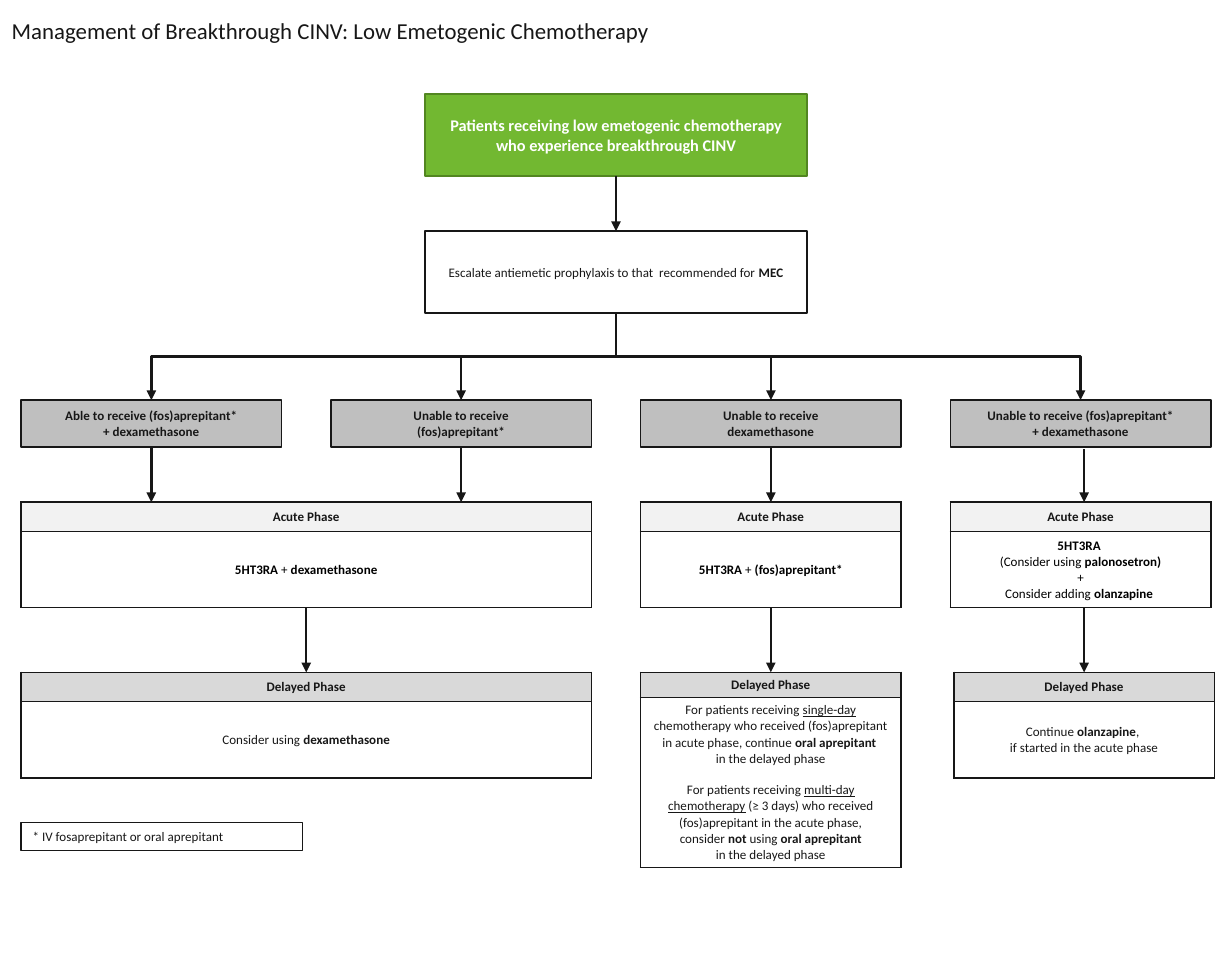
from collections import namedtuple
from dataclasses import dataclass

from lxml.etree import SubElement
from pptx import Presentation
from pptx.dml.color import RGBColor
from pptx.enum.shapes import MSO_CONNECTOR as Link, MSO_SHAPE as Preset
from pptx.enum.text import MSO_ANCHOR as Anchor, MSO_AUTO_SIZE as Fit, PP_ALIGN as Align
from pptx.oxml.ns import qn
from pptx.util import Pt

SCALE = 9144
Box = namedtuple("Box", "x y w h")


@dataclass(frozen=True)
class Theme:
    font: str = "Calibri"
    ink: str = "171717"
    black: str = "000000"
    white: str = "FFFFFF"
    green: str = "72B831"
    green_edge: str = "528621"
    branch: str = "BFBFBF"
    acute: str = "F2F2F2"
    delayed: str = "D9D9D9"
    title_size: int = 14
    start_size: int = 10
    text_size: int = 8
    border: float = 1
    arrow: float = 1.5


THEME = Theme()
STYLES = {"plain": {}, "bold": {"bold": True}, "underlined": {"underline": True}}


def px(value):
    return round(value * SCALE)


def emu(box):
    return [px(length) for length in box]


def apply(target, formats):
    for name, value in formats.items():
        setattr(target, name, value)


def paint(fill, colour):
    if colour:
        fill.solid()
        fill.fore_color.rgb = RGBColor.from_string(colour)
    else:
        fill.background()


def write(frame, paragraphs, colour=THEME.ink, size=THEME.text_size, align=Align.CENTER, gaps=()):
    for index, runs in enumerate(paragraphs):
        para = frame.add_paragraph() if index else frame.paragraphs[0]
        para.alignment = align
        if index in gaps:
            para.space_before = Pt(size * 1.22)
        for text, style in runs:
            span = para.add_run()
            span.text = text
            apply(span.font, {"name": THEME.font, "size": Pt(size), "bold": False, **STYLES[style]})
            span.font.color.rgb = RGBColor.from_string(colour)


def rectangle(page, box, fill=None, edge=THEME.ink, side=10, anchor=Anchor.MIDDLE):
    shape = page.shapes.add_shape(Preset.RECTANGLE, *emu(box))
    shape.shadow.inherit = False
    paint(shape.fill, fill)
    paint(shape.line.fill, edge)
    shape.line.width = Pt(THEME.border)
    apply(shape.text_frame, {"word_wrap": True, "vertical_anchor": anchor, "margin_left": px(side),
                             "margin_right": px(side), "margin_top": px(5), "margin_bottom": px(5)})
    return shape


def style_arrow(connector):
    paint(connector.line.fill, THEME.ink)
    connector.line.width = Pt(THEME.arrow)
    SubElement(connector.line._get_or_add_ln(), qn("a:tailEnd"), type="triangle")
    SubElement(connector._element.spPr, qn("a:effectLst"))


def down_arrow(page, x, top, bottom, source=None, target=None):
    connector = page.shapes.add_connector(Link.STRAIGHT, px(x), px(top), px(x), px(bottom))
    if source:
        connector.begin_connect(source, 2)
    if target:
        connector.end_connect(target, 0)
    style_arrow(connector)


def branch_arrow(page, source, target):
    connector = page.shapes.add_connector(Link.ELBOW, 0, 0, 0, 0)
    connector.begin_connect(source, 2)
    connector.end_connect(target, 0)
    start_x, start_y = source.left + source.width // 2, source.top + source.height
    end_x, end_y = target.left + target.width // 2, target.top
    drop, reach = end_y - start_y, abs(end_x - start_x)
    apply(connector, {"left": (start_x + end_x - drop) // 2, "top": (start_y + end_y - reach) // 2,
                      "width": drop, "height": reach})
    leftward = end_x < start_x
    frame = connector._element.spPr.find(qn("a:xfrm"))
    frame.set("rot", str((90 if leftward else 270) * 60000))
    frame.set("flipH", "0" if leftward else "1")
    style_arrow(connector)


def outline_cell(cell):
    properties = cell._tc.get_or_add_tcPr()
    for index, side in enumerate(("lnL", "lnR", "lnT", "lnB")):
        line = properties.makeelement(qn(f"a:{side}"), {"w": str(Pt(THEME.border))})
        SubElement(SubElement(line, qn("a:solidFill")), qn("a:srgbClr"), val=THEME.ink)
        properties.insert(index, line)


def phase_table(page, box, heading, fill, body, colour=THEME.ink, header=25, gaps=()):
    table = page.shapes.add_table(2, 1, *emu(box)).table
    apply(table, {"first_row": False, "horz_banding": False})
    contents = [(header, fill, [[(heading, "bold")]], THEME.ink, ()),
                (box.h - header, None, body, colour, gaps)]
    for index, (height, shade, paragraphs, ink, spaced) in enumerate(contents):
        table.rows[index].height = px(height)
        cell = table.cell(index, 0)
        apply(cell, {"vertical_anchor": Anchor.MIDDLE, "margin_left": px(7), "margin_right": px(7),
                     "margin_top": px(4), "margin_bottom": px(4)})
        paint(cell.fill, shade)
        outline_cell(cell)
        write(cell.text_frame, paragraphs, ink, gaps=spaced)


def add_title(page, box):
    title = page.shapes.title
    apply(title, dict(zip(("left", "top", "width", "height"), emu(box))))
    apply(title.text_frame, {"word_wrap": True, "auto_size": Fit.NONE, "vertical_anchor": Anchor.MIDDLE})
    write(title.text_frame, [[("Management of Breakthrough CINV: Low Emetogenic Chemotherapy", "plain")]],
          size=THEME.title_size, align=Align.LEFT)


def add_start(page, box):
    height = 70
    start = rectangle(page, box._replace(h=height), THEME.green, THEME.green_edge)
    write(start.text_frame,
          [[("Patients receiving low emetogenic chemotherapy who experience breakthrough CINV", "bold")]],
          THEME.white, THEME.start_size)
    escalate_top = box.y + box.h - height
    escalate = rectangle(page, box._replace(y=escalate_top, h=height), THEME.white)
    write(escalate.text_frame,
          [[("Escalate antiemetic prophylaxis to that  recommended for ", "plain"), ("MEC", "bold")]])
    down_arrow(page, box.x + box.w // 2, box.y + height, escalate_top, start, escalate)
    return escalate


def add_branches(page, box, pitch, source, phase_top):
    labels = [("Able to receive (fos)aprepitant*", "+ dexamethasone"),
              ("Unable to receive", "(fos)aprepitant*"),
              ("Unable to receive", "dexamethasone"),
              ("Unable to receive (fos)aprepitant*", "+ dexamethasone")]
    for index, lines in enumerate(labels):
        left = box.x + index * pitch
        branch = rectangle(page, box._replace(x=left), THEME.branch, side=5)
        write(branch.text_frame, [[(line, "bold")] for line in lines])
        branch_arrow(page, source, branch)
        middle, bottom = left + box.w // 2, box.y + box.h
        if index < 3:
            down_arrow(page, middle, bottom, phase_top, branch)
        else:
            down_arrow(page, middle + 3, bottom + 2, phase_top)


def add_acute(page, box, pitch):
    bodies = [(0, box.w + pitch, [[("5HT3RA", "bold"), (" + ", "plain"), ("dexamethasone", "bold")]]),
              (2, box.w, [[("5HT3RA", "bold"), (" + ", "plain"), ("(fos)aprepitant*", "bold")]]),
              (3, box.w, [[("5HT3RA ", "bold")],
                          [("(Consider using ", "plain"), ("palonosetron)", "bold")],
                          [("+", "plain")],
                          [("Consider adding ", "plain"), ("olanzapine ", "bold")]])]
    for column, width, body in bodies:
        phase_table(page, box._replace(x=box.x + column * pitch, w=width),
                    "Acute Phase", THEME.acute, body, THEME.black)


def add_delayed(page, box, pitch, acute_bottom):
    single_and_multi = [
        [("For patients receiving ", "plain"), ("single-day ", "underlined"),
         ("chemotherapy who received (fos)aprepitant in acute phase, continue ", "plain"),
         ("oral aprepitant ", "bold")],
        [("in the delayed phase", "plain")],
        [("For patients receiving ", "plain"), ("multi-day chemotherapy", "underlined"),
         (" (≥ 3 days) who received (fos)aprepitant in the acute phase,", "plain")],
        [("consider ", "plain"), ("not", "bold"), (" using ", "plain"), ("oral aprepitant", "bold")],
        [("in the delayed phase", "plain")]]
    olanzapine = [[("Continue ", "plain"), ("olanzapine", "bold"), (", ", "plain")],
                  [("if started in the acute phase", "plain")]]
    wide = box.w + pitch
    tables = [(box._replace(w=wide), [[("Consider using ", "plain"), ("dexamethasone", "bold")]], 25, ()),
              (box._replace(x=box.x + 2 * pitch, h=165), single_and_multi, 21, (2,)),
              (box._replace(x=box.x + 3 * pitch + 3), olanzapine, 25, ())]
    for place, body, header, gaps in tables:
        phase_table(page, place, "Delayed Phase", THEME.delayed, body, header=header, gaps=gaps)
        down_arrow(page, place.x + place.w // 2, acute_bottom, place.y)


def add_note(page, box):
    note = rectangle(page, box, anchor=Anchor.TOP)
    note.text_frame.auto_size = Fit.SHAPE_TO_FIT_TEXT
    write(note.text_frame, [[("* IV fosaprepitant or oral aprepitant", "plain")]], align=Align.LEFT)


def main():
    deck = Presentation()
    apply(deck, {"slide_width": px(1050), "slide_height": px(825)})
    page = deck.slides.add_slide(deck.slide_layouts[5])
    pitch = 264
    branches, acute, delayed = Box(18, 341, 222, 40), Box(18, 428, 222, 90), Box(18, 573, 222, 90)
    add_title(page, Box(0, 0, 1050, 51))
    escalate = add_start(page, Box(362, 80, 326, 187))
    add_branches(page, branches, pitch, escalate, acute.y)
    add_acute(page, acute, pitch)
    add_delayed(page, delayed, pitch, acute.y + acute.h)
    add_note(page, Box(18, 701, 240, 24))
    deck.save("out.pptx")


if __name__ == "__main__":
    main()
